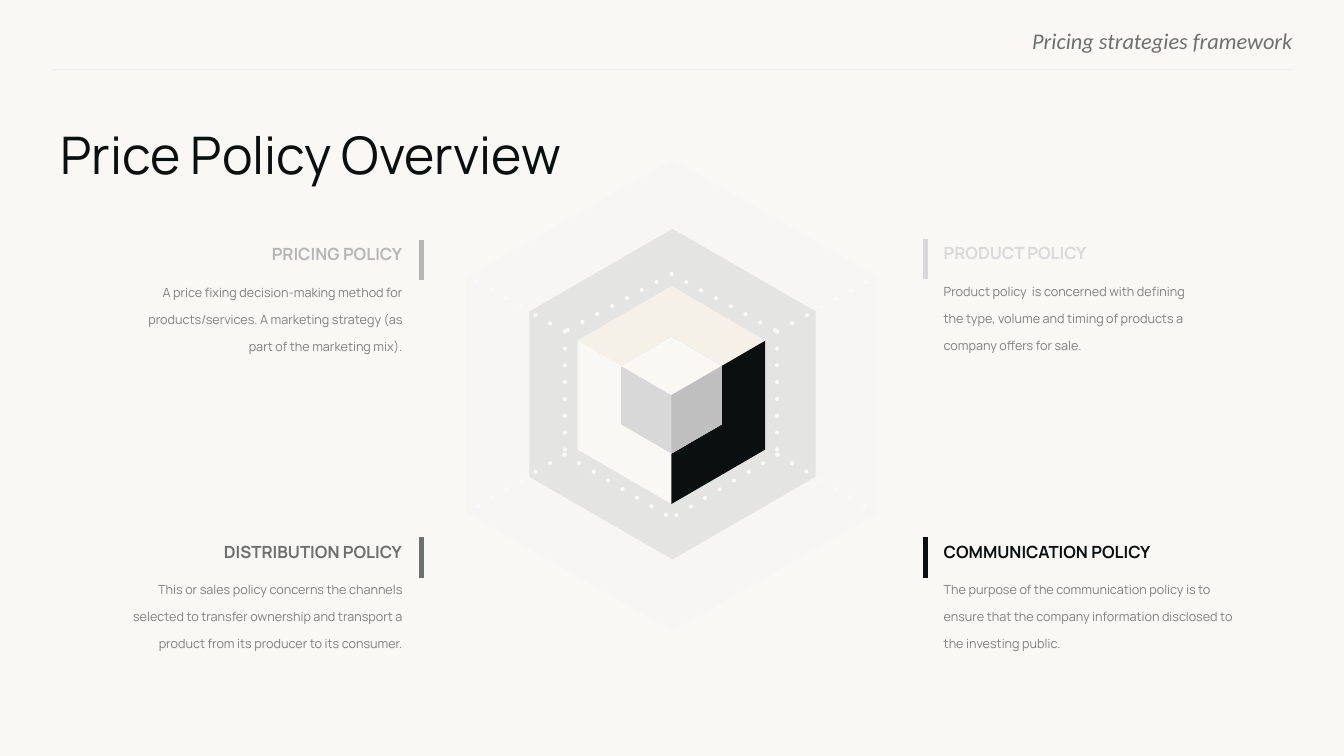
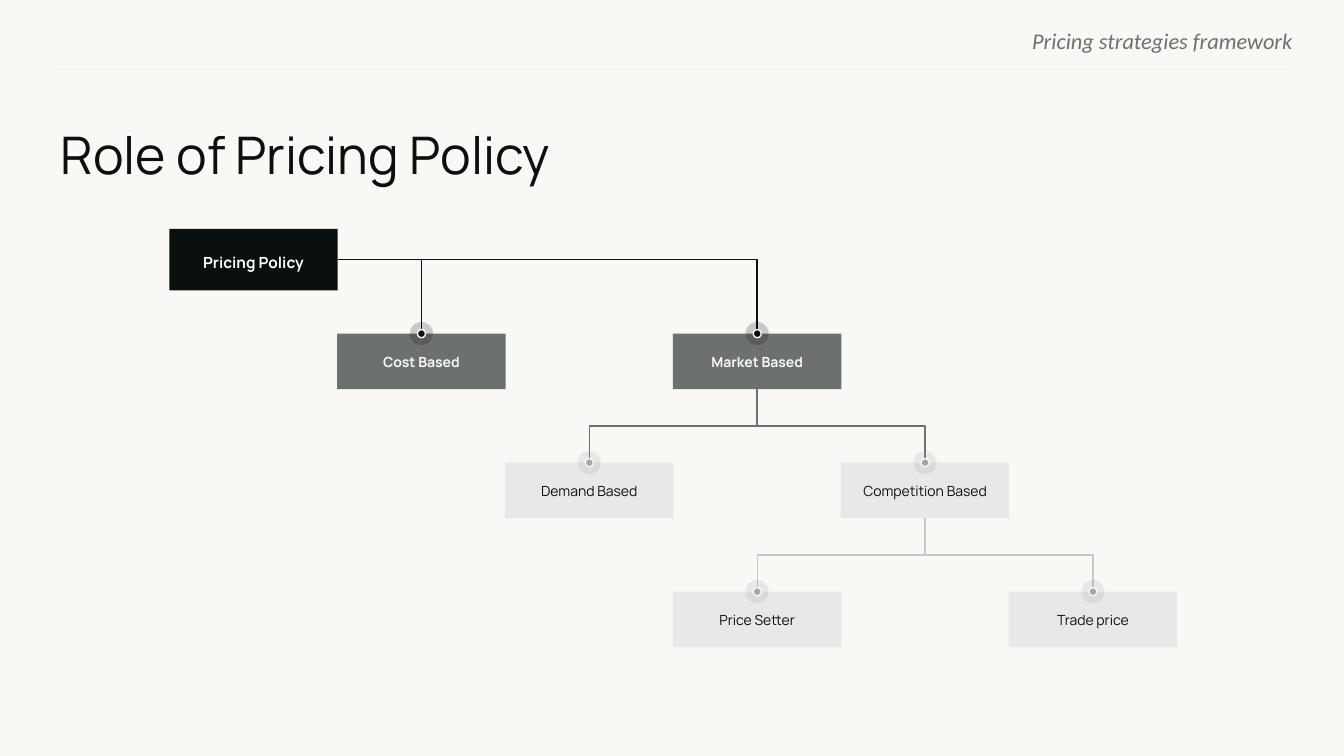
from dataclasses import dataclass

from lxml.etree import SubElement
from pptx import Presentation
from pptx.dml.color import RGBColor
from pptx.enum.shapes import MSO_CONNECTOR as Conn, MSO_SHAPE as Shape
from pptx.enum.text import MSO_ANCHOR as Anchor, MSO_AUTO_SIZE as AutoSize, PP_ALIGN as Align
from pptx.oxml.ns import qn
from pptx.util import Inches, Pt

Point = tuple[float, float]


@dataclass(frozen=True)
class Theme:
    paper: str = "F9F8F5"
    ink: str = "09100F"
    slate: str = "6C706F"
    body: str = "7F7F7F"
    white: str = "FFFFFF"
    cream: str = "F5F1E8"
    rule: str = "EFEFEF"
    halo: str = "F2F2F2"
    dots: str = "F9F9F9"
    pale: str = "D8D8D8"
    shade: str = "BFBFBF"
    mist: str = "D9D9D9"
    ash: str = "B5B7B7"
    box: str = "E8E8E8"
    link: str = "C7C7C7"
    pin: str = "A5A5A5"
    font: str = "Manrope"
    header_font: str = "Calibri"
    title_size: float = 37
    header_size: float = 16
    heading_size: float = 12
    root_size: float = 11
    node_size: float = 10
    body_size: float = 9


T = Theme()


@dataclass(frozen=True)
class Policy:
    heading: str
    text: str
    top: float
    width: float
    color: str
    on_left: bool


@dataclass(frozen=True)
class Level:
    top: float
    height: float
    fill: str
    color: str
    link: str
    pin: str = T.pin
    size: float = T.node_size
    bold: bool = False
    spacing: float = 0.8
    inset: float = 0.05


@dataclass(frozen=True)
class Node:
    text: str
    column: int
    level: int
    parent: str = ""


POLICIES = [
    Policy("PRICING POLICY",
           "A price fixing decision-making method for products/services. "
           "A marketing strategy (as part of the marketing mix).",
           2.38, 2.6, T.ash, True),
    Policy("PRODUCT POLICY",
           "Product policy  is concerned with defining the type, volume and timing "
           "of products a company offers for sale.",
           2.37, 2.4, T.mist, False),
    Policy("DISTRIBUTION POLICY",
           "This or sales policy concerns the channels selected to transfer ownership "
           "and transport a product from its producer to its consumer.",
           5.33, 2.88, T.slate, True),
    Policy("COMMUNICATION POLICY",
           "The purpose of the communication policy is to ensure that the company "
           "information disclosed to the investing public.",
           5.33, 2.99, T.ink, False),
]

LEVELS = [
    Level(2.27, 0.61, T.ink, T.white, T.ink, size=T.root_size, bold=True, spacing=1.3, inset=0),
    Level(3.31, 0.55, T.slate, T.paper, T.slate, pin=T.ink, bold=True),
    Level(4.59, 0.55, T.box, T.ink, T.link),
    Level(5.87, 0.55, T.box, T.ink, T.link),
]

NODES = [
    Node("Pricing Policy", 0, 0),
    Node("Cost Based", 1, 1, "Pricing Policy"),
    Node("Market Based", 3, 1, "Pricing Policy"),
    Node("Demand Based", 2, 2, "Market Based"),
    Node("Competition Based", 4, 2, "Market Based"),
    Node("Price Setter", 3, 3, "Competition Based"),
    Node("Trade price", 5, 3, "Competition Based"),
]


def rgb(color: str) -> RGBColor:
    return RGBColor.from_string(color)


def write(tf, text: str, *, size: float, color: str, font: str = T.font, bold=False,
          italic=False, align=Align.LEFT, spacing: float | None = None,
          anchor=Anchor.TOP, inset_top: float = 0):
    """Put one formatted paragraph in a text frame and return it."""
    tf.word_wrap = True
    tf.auto_size = AutoSize.NONE
    tf.vertical_anchor = anchor
    tf.margin_left = tf.margin_right = tf.margin_bottom = 0
    tf.margin_top = Inches(inset_top)
    p = tf.paragraphs[0]
    p.alignment = align
    if spacing:
        p.line_spacing = spacing
    r = p.add_run()
    r.text = text
    r.font.name, r.font.size = font, Pt(size)
    r.font.bold, r.font.italic = bold, italic
    r.font.color.rgb = rgb(color)
    return p


def add_text(s, x: float, y: float, w: float, h: float, text: str, **style) -> None:
    box = s.shapes.add_textbox(Inches(x), Inches(y), Inches(w), Inches(h))
    write(box.text_frame, text, **style)


def paint(sp, color: str, opacity: int = 100) -> None:
    """Give a shape a flat fill, with no outline or shadow."""
    sp.shadow.inherit = False
    sp.fill.solid()
    sp.fill.fore_color.rgb = rgb(color)
    sp.line.fill.background()
    if opacity < 100:
        clr = sp.element.spPr.find(f".//{qn('a:srgbClr')}")
        SubElement(clr, qn("a:alpha"), val=str(opacity * 1000))


def style_line(c, color: str, width: float) -> None:
    c.line.color.rgb = rgb(color)
    c.line.width = Pt(width)
    SubElement(c.element.spPr, qn("a:effectLst"))


def add_line(s, start: Point, end: Point, color: str, width: float, dotted=False) -> None:
    ends = [Inches(v) for v in (*start, *end)]
    c = s.shapes.add_connector(Conn.STRAIGHT, *ends)
    style_line(c, color, width)
    if dotted:
        ln = c.get_or_add_ln()
        ln.set("cap", "rnd")
        SubElement(ln, qn("a:prstDash"), val="dot")


def add_polygon(s, points: list[Point], color: str, opacity: int = 100) -> None:
    start, *rest = [(Inches(x), Inches(y)) for x, y in points]
    builder = s.shapes.build_freeform(*start)
    builder.add_line_segments(rest, close=True)
    paint(builder.convert_to_shape(), color, opacity)


def hexagon(cx: float, cy: float, w: float, h: float) -> list[Point]:
    """Corners clockwise from the top, for half width w and half height h."""
    return [(cx, cy - h), (cx + w, cy - h / 2), (cx + w, cy + h / 2),
            (cx, cy + h), (cx - w, cy + h / 2), (cx - w, cy - h / 2)]


def add_slide(prs, title: str):
    """Add a title-only slide with the shared header and title style."""
    s = prs.slides.add_slide(prs.slide_layouts[5])
    add_text(s, 7.68, 0.27, 5.14, 0.24, "Pricing strategies framework", size=T.header_size,
             font=T.header_font, color=T.slate, italic=True, align=Align.RIGHT)
    add_line(s, (12.82, 0.69), (0.52, 0.69), T.rule, 0.75)
    sp = s.shapes.title
    sp.left, sp.top, sp.width, sp.height = (Inches(v) for v in (0.6, 1.22, 12.3, 0.68))
    p = write(sp.text_frame, title, size=T.title_size, color=T.ink)
    p.space_after = Pt(13)
    return s


def draw_cube(s) -> None:
    add_polygon(s, hexagon(6.67, 3.92, 2.04, 2.34), T.halo, 20)
    add_polygon(s, hexagon(6.67, 3.91, 1.42, 1.64), T.pale, 60)
    center = (6.66, 3.92)
    outer = hexagon(*center, 0.93, 1.08)
    inner = hexagon(*center, 0.5, 0.58)
    add_polygon(s, outer, T.paper)
    add_polygon(s, [outer[0], outer[5], inner[5], inner[0], inner[1], outer[1]], T.cream)
    add_polygon(s, [outer[1], inner[1], inner[2], inner[3], outer[3], outer[2]], T.ink)
    add_polygon(s, inner, T.pale)
    add_polygon(s, [inner[0], inner[1], center, inner[5]], T.paper)
    add_polygon(s, [inner[1], inner[2], inner[3], center], T.shade)


def draw_dotted_frame(s) -> None:
    top, bottom = (6.66, 2.72), (6.66, 5.14)
    for x, far_x in ((7.71, 8.7), (5.6, 4.63)):
        upper, lower = (x, 3.29), (x, 4.51)
        for start, end in ((top, upper), (upper, lower), (lower, bottom),
                           (upper, (far_x, 2.74)), (lower, (far_x, 5.09))):
            add_line(s, start, end, T.dots, 3, dotted=True)


def draw_policy(s, policy: Policy) -> None:
    bar_x = 4.18 if policy.on_left else 9.18
    align = Align.RIGHT if policy.on_left else Align.LEFT
    add_line(s, (bar_x, policy.top), (bar_x, policy.top + 0.4), policy.color, 4)
    for text, dy, w, h, style in (
        (policy.heading, 0, 2.72, 0.23,
         dict(size=T.heading_size, color=policy.color, bold=True, spacing=1.2)),
        (policy.text, 0.33, policy.width, 0.65,
         dict(size=T.body_size, color=T.body, spacing=1.78)),
    ):
        x = 3.99 - w if policy.on_left else 9.36
        add_text(s, x, policy.top + dy, w, h, text, align=align, **style)


def draw_node(s, node: Node):
    level = LEVELS[node.level]
    sp = s.shapes.add_shape(Shape.RECTANGLE, Inches(1.68 + node.column * 1.665),
                            Inches(level.top), Inches(1.67), Inches(level.height))
    paint(sp, level.fill)
    write(sp.text_frame, node.text, size=level.size, color=level.color, bold=level.bold,
          align=Align.CENTER, spacing=level.spacing, anchor=Anchor.MIDDLE,
          inset_top=level.inset)
    return sp


def link_nodes(s, parent, child, color: str, from_side: bool) -> None:
    """Join a parent's right side or bottom to the top of a child."""
    c = s.shapes.add_connector(Conn.ELBOW, 0, 0, 0, 0)
    c.begin_connect(parent, 3 if from_side else 2)
    c.end_connect(child, 0)
    style_line(c, color, 1)
    if from_side:
        c.element.spPr.find(qn("a:prstGeom")).set("prst", "bentConnector2")
        return
    # A vertical elbow is a horizontal one turned about its centre.
    dx, dy = c.end_x - c.begin_x, c.end_y - c.begin_y
    mid_x, mid_y = c.begin_x + dx // 2, c.begin_y + dy // 2
    c.width, c.height = dy, abs(dx)
    c.left, c.top = mid_x - dy // 2, mid_y - abs(dx) // 2
    xfrm = c.element.spPr.find(qn("a:xfrm"))
    xfrm.set("rot", str((270 if dx > 0 else 90) * 60000))
    xfrm.set("flipH", "1" if dx > 0 else "0")


def draw_pin(s, box, color: str) -> None:
    """Mark the middle of a box's top edge with a dot in a soft ring."""
    for size, opacity in ((0.23, 20), (0.08, 100)):
        d = Inches(size)
        sp = s.shapes.add_shape(Shape.OVAL, box.left + (box.width - d) // 2,
                                box.top - d // 2, d, d)
        paint(sp, color, opacity)
    sp.line.color.rgb = rgb(T.paper)
    sp.line.width = Pt(1)


def build_overview(prs) -> None:
    s = add_slide(prs, "Price Policy Overview")
    draw_cube(s)
    draw_dotted_frame(s)
    for policy in POLICIES:
        draw_policy(s, policy)


def build_tree(prs) -> None:
    s = add_slide(prs, "Role of Pricing Policy")
    boxes = {node.text: draw_node(s, node) for node in NODES}
    children = [node for node in NODES if node.parent]
    for node in children:
        link_nodes(s, boxes[node.parent], boxes[node.text],
                   LEVELS[node.level - 1].link, from_side=node.level == 1)
    for node in children:
        draw_pin(s, boxes[node.text], LEVELS[node.level].pin)


def main() -> None:
    prs = Presentation()
    prs.slide_width, prs.slide_height = Inches(13.33), Inches(7.5)
    fill = prs.slide_master.background.fill
    fill.solid()
    fill.fore_color.rgb = rgb(T.paper)
    build_overview(prs)
    build_tree(prs)
    prs.save("out.pptx")


if __name__ == "__main__":
    main()
